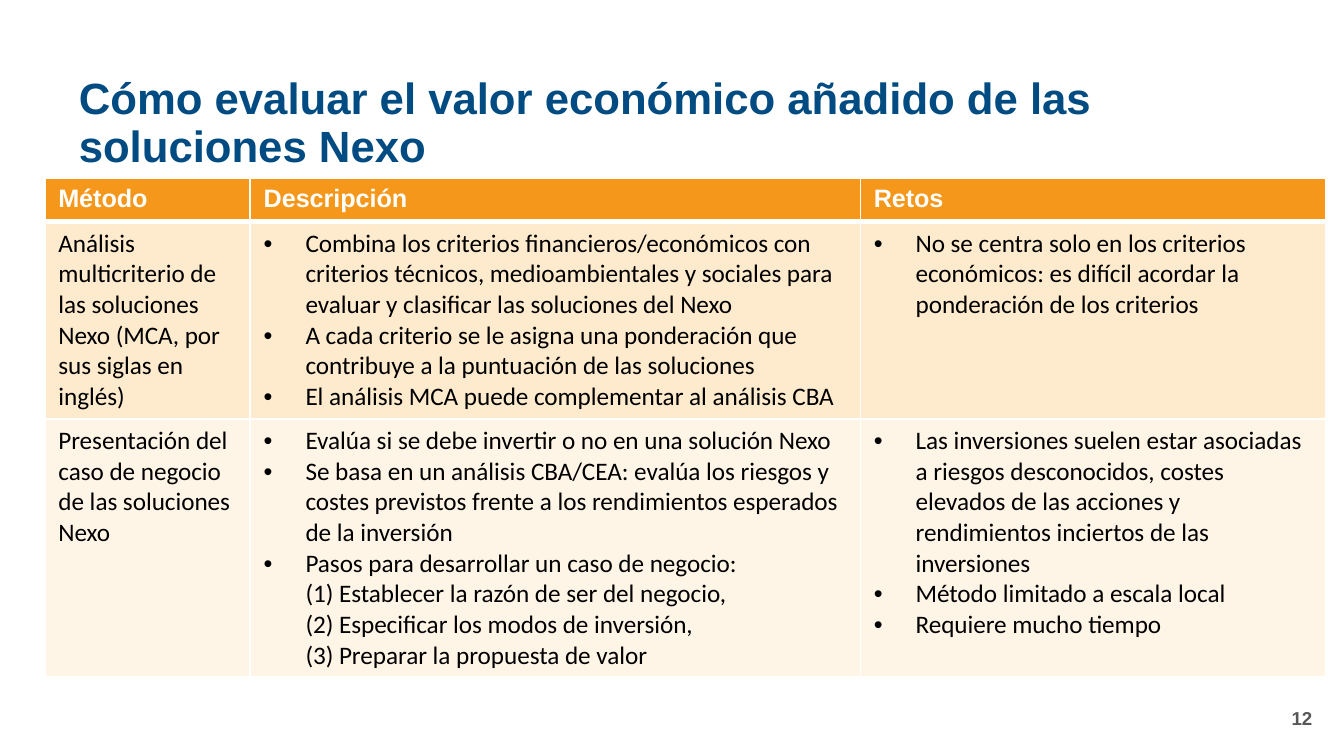
from copy import deepcopy

from lxml import etree
from pptx import Presentation
from pptx import util as u
from pptx.dml.color import RGBColor
from pptx.enum import text as t
from pptx.oxml import ns

HEADER_FILL = "F4971A"
ROW_FILLS = ["FEEACC", "FFF5E7"]
WHITE = "FFFFFF"


def write_text(frame, paragraphs, size=13.5, font="Calibri", color="000000", bold=False,
               bullet=False, align=t.PP_ALIGN.LEFT, spacing=None,
               anchor=t.MSO_ANCHOR.TOP):
    """Fill a text frame with one paragraph per string; a newline is a line break."""
    frame.word_wrap = True
    frame.vertical_anchor = anchor
    for index, content in enumerate(paragraphs):
        paragraph = frame.add_paragraph() if index else frame.paragraphs[0]
        paragraph.text = content
        paragraph.alignment = align
        if spacing:
            paragraph.line_spacing = spacing
        if bullet:
            properties = paragraph._p.get_or_add_pPr()
            properties.set("marL", str(u.Cm(0.79)))
            properties.set("indent", str(-u.Cm(0.79)))
            etree.SubElement(properties, ns.qn("a:buFont"), typeface="Arial")
            etree.SubElement(properties, ns.qn("a:buChar"), char="•")
        for run in paragraph.runs:
            run.font.size = u.Pt(size)
            run.font.name = font
            run.font.bold = bold
            run.font.color.rgb = RGBColor.from_string(color)
        for line_break in paragraph._p.findall(ns.qn("a:br")):
            line_break.append(deepcopy(paragraph.runs[0]._r.rPr))


def style_cell(cell, fill, top=1, bottom=1):
    """Set the fill and the white borders, with widths in points."""
    cell.fill.solid()
    cell.fill.fore_color.rgb = RGBColor.from_string(fill)
    properties = cell._tc.get_or_add_tcPr()
    widths = {"lnL": 1, "lnR": 1, "lnT": top, "lnB": bottom}
    for index, (side, width) in enumerate(widths.items()):
        line = etree.Element(ns.qn(f"a:{side}"), w=str(u.Pt(width)))
        solid = etree.SubElement(line, ns.qn("a:solidFill"))
        etree.SubElement(solid, ns.qn("a:srgbClr"), val=WHITE)
        properties.insert(index, line)


presentation = Presentation()
presentation.slide_width = u.Cm(25.4)
presentation.slide_height = u.Cm(14.29)
slide = presentation.slides.add_slide(presentation.slide_layouts[6])

title = slide.shapes.add_textbox(u.Cm(1.24), u.Cm(1.6), u.Cm(23.8), u.Cm(1.5))
write_text(title.text_frame,
           ["Cómo evaluar el valor económico añadido de las soluciones Nexo"],
           size=23.4, font="Arial", color="004C82", bold=True, spacing=0.9,
           anchor=t.MSO_ANCHOR.MIDDLE)

page_number = slide.shapes.add_textbox(u.Cm(19.33), u.Cm(13.2), u.Cm(5.72), u.Cm(0.76))
write_text(page_number.text_frame, ["12"], size=10, font="Arial", color="575756", bold=True,
           align=t.PP_ALIGN.RIGHT, anchor=t.MSO_ANCHOR.MIDDLE)

headings = ["Método", "Descripción", "Retos"]
methods = [
    (
        ["Análisis multicriterio de las soluciones Nexo (MCA, por sus siglas en inglés)"],
        ["Combina los criterios financieros/económicos con criterios técnicos, "
         "medioambientales y sociales para evaluar y clasificar las soluciones del Nexo",
         "A cada criterio se le asigna una ponderación que contribuye a la puntuación "
         "de las soluciones",
         "El análisis MCA puede complementar al análisis CBA"],
        ["No se centra solo en los criterios económicos: es difícil acordar la "
         "ponderación de los criterios"],
    ),
    (
        ["Presentación del caso de negocio de las soluciones Nexo"],
        ["Evalúa si se debe invertir o no en una solución Nexo",
         "Se basa en un análisis CBA/CEA: evalúa los riesgos y costes previstos frente "
         "a los rendimientos esperados de la inversión",
         "Pasos para desarrollar un caso de negocio:\n"
         "(1) Establecer la razón de ser del negocio,\n"
         "(2) Especificar los modos de inversión,\n"
         "(3) Preparar la propuesta de valor"],
        ["Las inversiones suelen estar asociadas a riesgos desconocidos, costes elevados "
         "de las acciones y rendimientos inciertos de las inversiones",
         "Método limitado a escala local",
         "Requiere mucho tiempo"],
    ),
]
column_widths = [3.88, 11.53, 8.8]
row_heights = [0.75, 3.73, 4.88]

table = slide.shapes.add_table(len(row_heights), len(column_widths), u.Cm(0.85), u.Cm(3.36),
                               u.Cm(sum(column_widths)), u.Cm(sum(row_heights))).table
for column, width in zip(table.columns, column_widths):
    column.width = u.Cm(width)
for row, height in zip(table.rows, row_heights):
    row.height = u.Cm(height)

for column, heading in enumerate(headings):
    cell = table.cell(0, column)
    style_cell(cell, HEADER_FILL, bottom=3)
    write_text(cell.text_frame, [heading], font="Arial", color=WHITE, bold=True)

for row, (method, fill) in enumerate(zip(methods, ROW_FILLS), start=1):
    for column, paragraphs in enumerate(method):
        cell = table.cell(row, column)
        style_cell(cell, fill, top=3 if row == 1 else 1)
        write_text(cell.text_frame, paragraphs, bullet=column > 0)

presentation.save("out.pptx")
